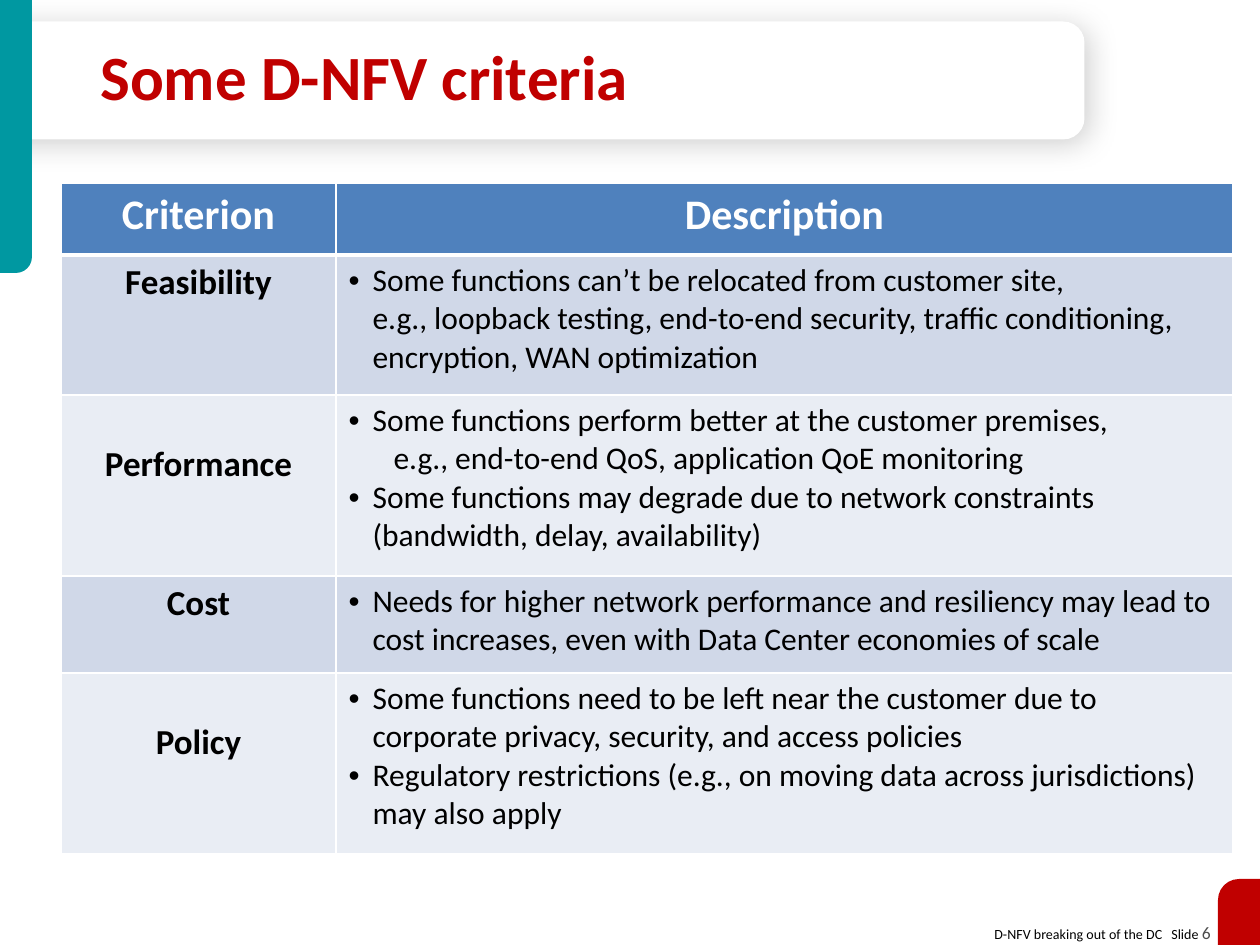
from dataclasses import dataclass

import pptx
import pptx.dml.color
import pptx.enum.shapes
import pptx.enum.text
import pptx.oxml.ns
import pptx.util
from lxml import etree

EMU_PER_PX = 914400 / 126
FONT = "Calibri"
RED, TEAL, WHITE, BLACK = "C00000", "0098A1", "FFFFFF", "000000"
HEADER_FILL, BAND_FILLS = "4F81BD", ("D0D8E8", "E9EDF4")
COLUMN_WIDTHS = (275, 897)
HEADER_HEIGHT = 72
CELL_MARGIN = 6
LOWERED_MARGIN = 48
BULLET_INDENT = 24
ALIGN = pptx.enum.text.PP_ALIGN
SHAPE = pptx.enum.shapes.MSO_SHAPE


@dataclass(frozen=True)
class Line:
    text: str
    bulleted: bool = True


@dataclass(frozen=True)
class Criterion:
    name: str
    height: int
    lines: tuple[Line, ...]
    name_margin: int = CELL_MARGIN


@dataclass(frozen=True)
class Panel:
    preset: int
    box: tuple[int, int, int, int]
    fill: str
    corner: float
    flip: str = ""
    rotation: int = 0


CRITERIA = (
    Criterion("Feasibility", 140, (
        Line("Some functions can’t be relocated from customer site,\v"
             "e.g., loopback testing, end-to-end security, traffic conditioning, "
             "encryption, WAN optimization"),
    )),
    Criterion("Performance", 181, (
        Line("Some functions perform better at the customer premises,"),
        Line("e.g., end-to-end QoS, application QoE monitoring", bulleted=False),
        Line("Some functions may degrade due to network constraints "
             "(bandwidth, delay, availability)"),
    ), LOWERED_MARGIN),
    Criterion("Cost", 97, (
        Line("Needs for higher network performance and resiliency may lead to "
             "cost increases, even with Data Center economies of scale"),
    )),
    Criterion("Policy", 181, (
        Line("Some functions need to be left near the customer due to "
             "corporate privacy, security, and access policies"),
        Line("Regulatory restrictions (e.g., on moving data across jurisdictions) "
             "may also apply"),
    ), LOWERED_MARGIN),
)

TITLE_PANEL = Panel(SHAPE.ROUND_2_SAME_RECTANGLE, (483, -462, 118, 1085), WHITE, 0.18, rotation=90)
CORNER_PANELS = (
    Panel(SHAPE.ROUND_1_RECTANGLE, (0, 0, 32, 273), TEAL, 0.5, flip="flipV"),
    Panel(SHAPE.ROUND_1_RECTANGLE, (1218, 879, 42, 66), RED, 0.5, flip="flipH"),
)


def px(value: int) -> int:
    return round(value * EMU_PER_PX)


def color(value: str) -> pptx.dml.color.RGBColor:
    return pptx.dml.color.RGBColor.from_string(value)


def add_element(parent, tag: str, **attributes):
    element = etree.SubElement(parent, pptx.oxml.ns.qn(tag))
    for name, value in attributes.items():
        element.set(name, str(value))
    return element


def set_font(font, size: int, fill: str, bold: bool = False) -> None:
    font.name = FONT
    font.size = pptx.util.Pt(size)
    font.bold = bold
    font.color.rgb = color(fill)


def add_panel(slide, panel: Panel):
    shape = slide.shapes.add_shape(panel.preset, *map(px, panel.box))
    shape.shadow.inherit = False
    shape.adjustments[0] = panel.corner
    shape.rotation = panel.rotation
    shape.fill.solid()
    shape.fill.fore_color.rgb = color(panel.fill)
    shape.line.fill.background()
    if panel.flip:
        shape._element.spPr.xfrm.set(panel.flip, "1")
    return shape


def add_soft_shadow(shape) -> None:
    effects = shape._element.spPr.find(pptx.oxml.ns.qn("a:effectLst"))
    shadow = add_element(effects, "a:outerShdw", blurRad=pptx.util.Pt(17),
                         dist=pptx.util.Pt(3), dir=45 * 60000, rotWithShape=0)
    shade = add_element(shadow, "a:srgbClr", val=BLACK)
    add_element(shade, "a:alpha", val=19000)


def add_text_box(slide, box: tuple[int, int, int, int]):
    frame = slide.shapes.add_textbox(*map(px, box)).text_frame
    frame.word_wrap = True
    return frame


def add_title(slide) -> None:
    frame = add_text_box(slide, (88, 37, 932, 89))
    frame.vertical_anchor = pptx.enum.text.MSO_ANCHOR.MIDDLE
    paragraph = frame.paragraphs[0]
    paragraph.text = "Some D-NFV criteria"
    paragraph.line_spacing = 0.85
    set_font(paragraph.font, 36, RED, bold=True)


def add_footer(slide) -> None:
    paragraph = add_text_box(slide, (982, 916, 250, 34)).paragraphs[0]
    tabs = add_element(paragraph._p.get_or_add_pPr(), "a:tabLst")
    add_element(tabs, "a:tab", pos=px(177), algn="l")
    for text, size, fill in (("D-NFV breaking out of the DC\tSlide ", 8, BLACK),
                             ("6", 10, "4D4D4D")):
        run = paragraph.add_run()
        run.text = text
        set_font(run.font, size, fill)


def style_cell(cell, fill: str, top: int = 1, bottom: int = 1) -> None:
    """Border widths are in points; borders come before the fill in the cell."""
    properties = cell._tc.get_or_add_tcPr()
    for side, width in (("L", 1), ("R", 1), ("T", top), ("B", bottom)):
        border = add_element(properties, f"a:ln{side}", w=pptx.util.Pt(width))
        add_element(add_element(border, "a:solidFill"), "a:srgbClr", val=WHITE)
    cell.fill.solid()
    cell.fill.fore_color.rgb = color(fill)


def write_label(cell, text: str, size: int, fill: str) -> None:
    paragraph = cell.text_frame.paragraphs[0]
    paragraph.text = text
    paragraph.alignment = ALIGN.CENTER
    set_font(paragraph.font, size, fill, bold=True)


def write_lines(cell, lines: tuple[Line, ...]) -> None:
    frame = cell.text_frame
    for index, line in enumerate(lines):
        paragraph = frame.add_paragraph() if index else frame.paragraphs[0]
        paragraph.text = line.text
        properties = paragraph._p.get_or_add_pPr()
        if line.bulleted:
            properties.set("marL", str(px(BULLET_INDENT)))
            properties.set("indent", str(-px(BULLET_INDENT)))
            add_element(properties, "a:buFont", typeface="Arial")
            add_element(properties, "a:buChar", char="•")
        else:
            properties.set("marL", str(px(BULLET_INDENT + 21)))
            properties.set("indent", "0")
            add_element(properties, "a:buNone")
        set_font(paragraph.font, 18, BLACK)


def add_criteria_table(slide) -> None:
    heights = (HEADER_HEIGHT, *(criterion.height for criterion in CRITERIA))
    table = slide.shapes.add_table(len(heights), len(COLUMN_WIDTHS), px(61), px(183),
                                   px(sum(COLUMN_WIDTHS)), px(sum(heights))).table
    table.horz_banding = False
    for column, width in zip(table.columns, COLUMN_WIDTHS):
        column.width = px(width)
    for row, height in zip(table.rows, heights):
        row.height = px(height)
    for cell, heading in zip(table.rows[0].cells, ("Criterion", "Description")):
        style_cell(cell, HEADER_FILL, bottom=3)
        write_label(cell, heading, 24, WHITE)
    for index, criterion in enumerate(CRITERIA):
        name_cell, description_cell = table.rows[index + 1].cells
        for cell in (name_cell, description_cell):
            style_cell(cell, BAND_FILLS[index % 2], top=1 if index else 3)
        name_cell.margin_top = px(criterion.name_margin)
        write_label(name_cell, criterion.name, 20, BLACK)
        write_lines(description_cell, criterion.lines)


def main() -> None:
    presentation = pptx.Presentation()
    presentation.slide_width, presentation.slide_height = px(1260), px(945)
    slide = presentation.slides.add_slide(presentation.slide_layouts[6])
    add_footer(slide)
    add_soft_shadow(add_panel(slide, TITLE_PANEL))
    for panel in CORNER_PANELS:
        add_panel(slide, panel)
    add_title(slide)
    add_criteria_table(slide)
    presentation.save("out.pptx")


if __name__ == "__main__":
    main()
